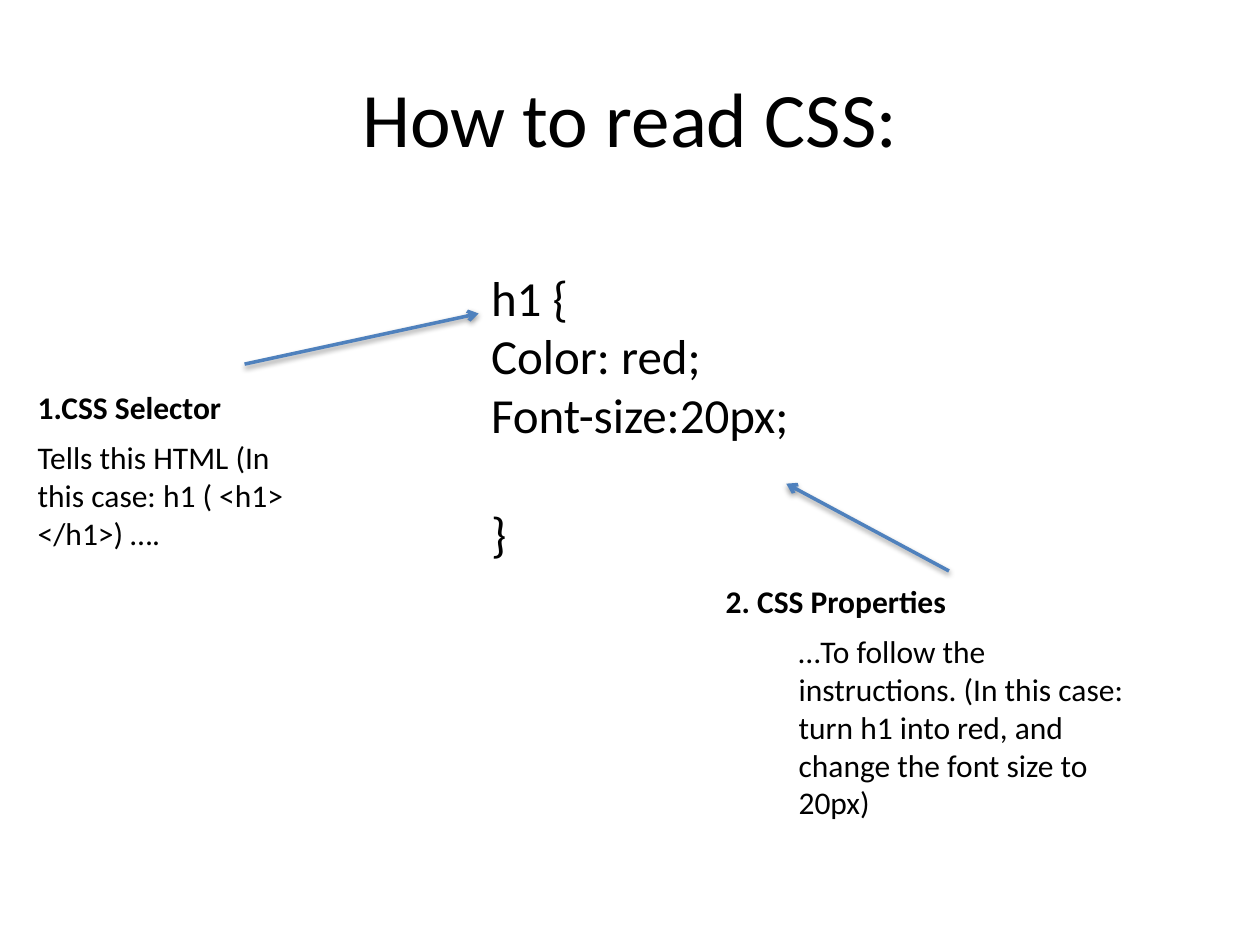
from lxml import etree
from pptx import Presentation
from pptx import util as u
from pptx.dml.color import RGBColor
from pptx.enum import shapes, text
from pptx.oxml.ns import qn


def paint(color_format, hex_string):
    color_format.rgb = RGBColor.from_string(hex_string)


def write(box, lines, size, bold=False):
    box.text_frame.text = "\n".join(lines)
    box.text_frame.word_wrap = True
    for para in box.text_frame.paragraphs:
        for span in para.runs:
            span.font.name = "Calibri"
            span.font.size = u.Pt(size)
            span.font.bold = bold
            paint(span.font.color, "000000")


deck = Presentation()
deck.slide_width, deck.slide_height = u.Cm(25.4), u.Cm(19.05)
page = deck.slides.add_slide(deck.slide_layouts[5])

# Title
title = page.shapes.title
title.left, title.top = u.Cm(1.27), u.Cm(0.76)
title.width, title.height = u.Cm(22.86), u.Cm(3.18)
write(title, ["How to read CSS:"], 44)
title.text_frame.vertical_anchor = text.MSO_ANCHOR.MIDDLE
title.text_frame.paragraphs[0].alignment = text.PP_ALIGN.CENTER

# Code sample and its explanations: left, top, width, height, size, bold, lines
text_blocks = [
    (9.65, 5.26, 8.2, 6.25, 28, False, ["h1 {", "Color: red;", "Font-size:20px;", "}"]),
    (0.51, 7.7, 5.54, 1.02, 18, True, ["1.CSS Selector"]),
    (0.51, 8.71, 6.2, 2.57, 18, False,
     ["Tells this HTML (In this case: h1 ( <h1> </h1>) …."]),
    (14.38, 11.61, 5.46, 1.02, 18, True, ["2. CSS Properties"]),
    (15.85, 12.62, 7.21, 4.11, 18, False,
     ["…To follow the instructions. (In this case: turn h1 into red, "
      "and change the font size to 20px)"]),
]
for left, top, width, height, size, bold, lines in text_blocks:
    box = page.shapes.add_textbox(u.Cm(left), u.Cm(top), u.Cm(width), u.Cm(height))
    write(box, lines, size, bold)
    if len(lines) > 1:
        # One line of space above the closing brace
        box.text_frame.paragraphs[-1].space_before = u.Pt(34)

# Arrows from the explanations to the code, with the theme's soft shadow
for x1, y1, x2, y2 in [(4.93, 7.34, 9.65, 6.32), (19.13, 11.51, 15.85, 9.75)]:
    arrow = page.shapes.add_connector(
        shapes.MSO_CONNECTOR.STRAIGHT, u.Cm(x1), u.Cm(y1), u.Cm(x2), u.Cm(y2))
    arrow.line.width = u.Pt(2)
    paint(arrow.line.color, "4F81BD")
    etree.SubElement(arrow.line._get_or_add_ln(), qn("a:tailEnd"), type="arrow")

deck.save("out.pptx")
